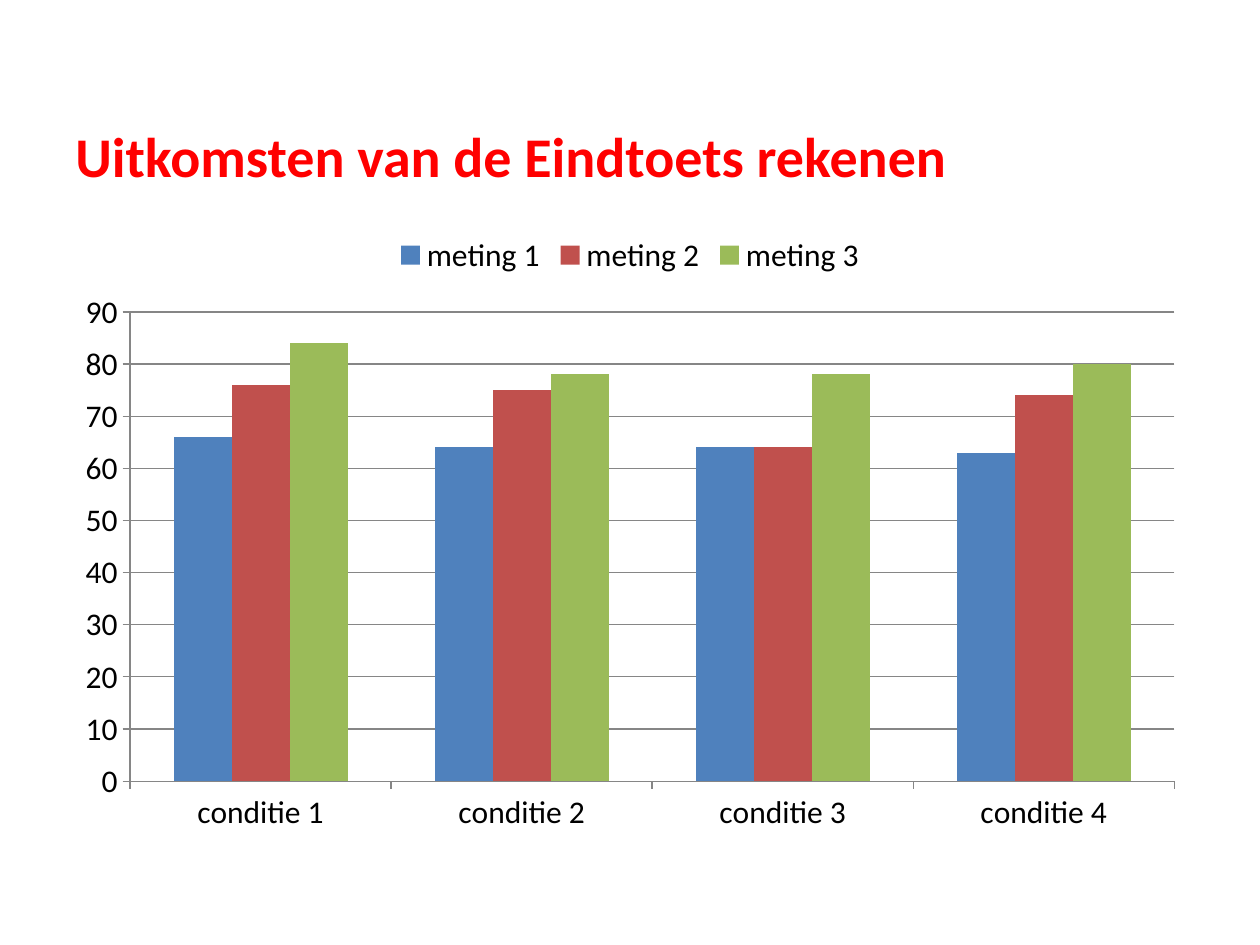
"""Build a slide with a clustered column chart of arithmetic test results."""
from pptx import Presentation
from pptx.chart.data import CategoryChartData
from pptx.dml.color import RGBColor
from pptx.enum.chart import XL_CHART_TYPE, XL_LEGEND_POSITION, XL_TICK_MARK
from pptx.enum.text import MSO_ANCHOR
from pptx.util import Inches, Pt

COLUMN = XL_CHART_TYPE.COLUMN_CLUSTERED
LEGEND_TOP = XL_LEGEND_POSITION.TOP
TICK_OUT = XL_TICK_MARK.OUTSIDE
BOTTOM = MSO_ANCHOR.BOTTOM
FONT = "Calibri"
COLORS = {
    "title": "FF0000",
    "text": "000000",
    "axis": "868686",
    "meting 1": "4F81BD",
    "meting 2": "C0504D",
    "meting 3": "9BBB59",
}
RESULTS = {
    "meting 1": (66, 64, 64, 63),
    "meting 2": (76, 75, 64, 74),
    "meting 3": (84, 78, 78, 80),
}


def rgb(name):
    return RGBColor.from_string(COLORS[name])


prs = Presentation()
prs.slide_width = Inches(10)
prs.slide_height = Inches(7.5)
s = prs.slides.add_slide(prs.slide_layouts[6])

title = s.shapes.add_textbox(Inches(0.5), Inches(0.3), Inches(9), Inches(1.25))
tf = title.text_frame
tf.word_wrap = True
tf.vertical_anchor = BOTTOM
r = tf.paragraphs[0].add_run()
r.text = "Uitkomsten van de Eindtoets rekenen"
r.font.name = FONT
r.font.size = Pt(32)
r.font.bold = True
r.font.color.rgb = rgb("title")

data = CategoryChartData()
data.categories = [f"conditie {i}" for i in range(1, 5)]
for name, values in RESULTS.items():
    data.add_series(name, values)

chart = s.shapes.add_chart(
    COLUMN, Inches(0.5), Inches(1.75), Inches(9), Inches(4.95), data
).chart
chart.has_title = False
chart.font.name = FONT
chart.font.size = Pt(18)
chart.font.color.rgb = rgb("text")
chart.has_legend = True
chart.legend.position = LEGEND_TOP
chart.legend.include_in_layout = False

for axis in (chart.category_axis, chart.value_axis):
    axis.major_tick_mark = TICK_OUT
    axis.format.line.color.rgb = rgb("axis")
    axis.format.line.width = Pt(0.75)

value_axis = chart.value_axis
value_axis.minimum_scale = 0
value_axis.maximum_scale = 90
value_axis.major_unit = 10
value_axis.has_major_gridlines = True
value_axis.major_gridlines.format.line.color.rgb = rgb("axis")
value_axis.major_gridlines.format.line.width = Pt(0.75)

plot = chart.plots[0]
plot.gap_width = 150
plot.overlap = 0
plot.vary_by_categories = False
for series in plot.series:
    series.format.fill.solid()
    series.format.fill.fore_color.rgb = rgb(series.name)

prs.save("out.pptx")
